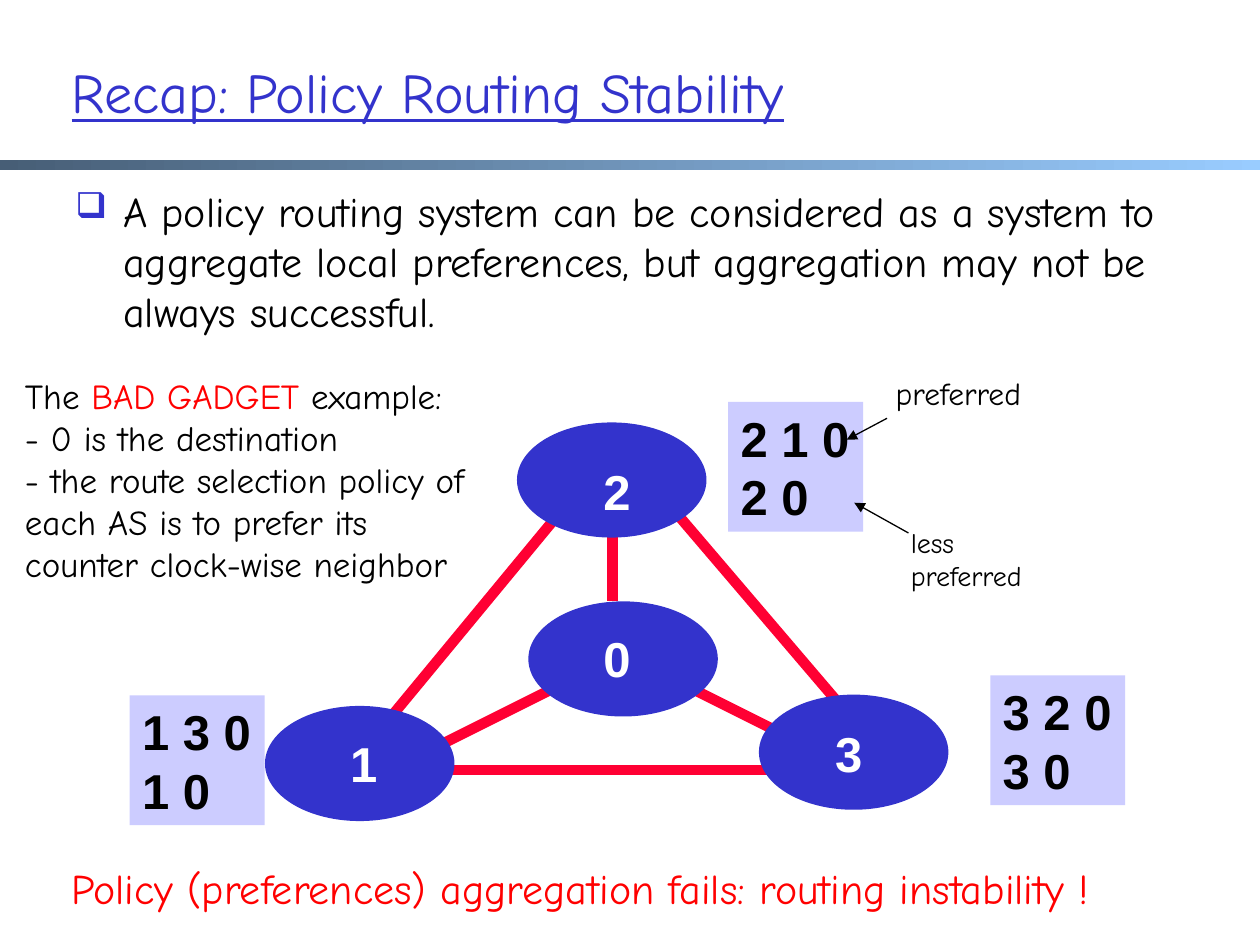
from dataclasses import dataclass
from typing import NamedTuple

from lxml.etree import SubElement
from pptx import Presentation
from pptx.dml.color import RGBColor
from pptx.enum.shapes import MSO_CONNECTOR as Connector, MSO_SHAPE as Preset
from pptx.enum.text import MSO_ANCHOR as Anchor
from pptx.oxml.ns import qn
from pptx.util import Pt

EMU_PER_PX = 9144


@dataclass(frozen=True)
class Theme:
    hand: str = "Comic Neue"
    sans: str = "Arial"
    blue: str = "3333CC"
    pale: str = "CCCCFF"
    link: str = "FF0033"
    red: str = "FF0000"
    black: str = "000000"
    white: str = "FFFFFF"
    bar_start: str = "475E76"
    bar_end: str = "99CCFF"
    title: int = 32
    number: int = 28
    body: int = 24
    note: int = 20
    label: int = 18
    small: int = 16
    link_width: float = 6
    arrow_width: float = 0.75


THEME = Theme()


class Box(NamedTuple):
    left: int
    top: int
    width: int
    height: int


class Line(NamedTuple):
    start_x: int
    start_y: int
    end_x: int
    end_y: int


class Style(NamedTuple):
    size: int
    color: str = THEME.black
    font: str = THEME.hand
    bold: bool = False


@dataclass(frozen=True)
class Node:
    name: str
    left: int
    top: int
    text_left: int
    text_top: int


@dataclass(frozen=True)
class Routes:
    lines: str
    left: int
    top: int


@dataclass(frozen=True)
class Note:
    text: str
    box: Box
    style: Style
    wrap: bool = True


LINKS = [
    Line(703, 602, 511, 377),
    Line(469, 377, 269, 619),
    Line(486, 352, 486, 477),
    Line(478, 527, 344, 594),
    Line(644, 594, 544, 544),
    Line(719, 611, 269, 611),
]
NODES = [
    Node("2", 411, 336, 469, 361),
    Node("0", 420, 478, 469, 494),
    Node("3", 603, 552, 653, 569),
    Node("1", 211, 561, 268, 577),
]
ROUTES = [
    Routes("2 1 0\n2 0", 578, 319),
    Routes("1 3 0\n1 0", 103, 552),
    Routes("3 2 0\n3 0", 786, 536),
]
ARROWS = [Line(704, 332, 672, 349), Line(721, 423, 678, 399)]
NOTES = [
    Note("preferred", Box(701, 292, 138, 40), Style(THEME.label), False),
    Note("less\npreferred", Box(713, 412, 125, 64), Style(THEME.small), False),
    Note("Policy (preferences) aggregation fails: routing instability !",
         Box(47, 680, 927, 50), Style(THEME.body, THEME.red)),
]
EXAMPLE = Note(
    "The BAD GADGET example:\n- 0 is the destination\n"
    "- the route selection policy of each AS is to prefer its counter clock-wise neighbor",
    Box(10, 292, 386, 177), Style(THEME.note))
TITLE = Note("Recap: Policy Routing Stability", Box(47, 28, 902, 89),
             Style(THEME.title, THEME.blue))
BODY = Note(
    "A policy routing system can be considered as a system to aggregate local "
    "preferences, but aggregation may not be always successful.",
    Box(50, 142, 881, 531), Style(THEME.body))
NUMBER = Style(THEME.number, THEME.black, THEME.sans, True)
NODE_NUMBER = NUMBER._replace(color=THEME.white)


def px(value: int) -> int:
    return value * EMU_PER_PX


def rgb(value: str) -> RGBColor:
    return RGBColor.from_string(value)


def format_run(run, style: Style) -> None:
    font = run.font
    font.name, font.size, font.bold = style.font, Pt(style.size), style.bold
    font.color.rgb = rgb(style.color)


def write(shape, text: str, style: Style, wrap: bool):
    frame = shape.text_frame
    frame.text = text
    frame.word_wrap = wrap
    frame.vertical_anchor = Anchor.TOP
    for paragraph in frame.paragraphs:
        paragraph.alignment = 1
        for run in paragraph.runs:
            format_run(run, style)
    return frame


def add_text(slide, note: Note):
    shape = slide.shapes.add_textbox(*map(px, note.box))
    return write(shape, note.text, note.style, note.wrap)


def add_filled(slide, preset: Preset, box: Box, color: str):
    shape = slide.shapes.add_shape(preset, *map(px, box))
    shape.shadow.inherit = False
    shape.fill.solid()
    shape.fill.fore_color.rgb = rgb(color)
    shape.line.fill.background()
    return shape


def add_line(slide, line: Line, color: str, width: float, arrow: bool = False) -> None:
    connector = slide.shapes.add_connector(Connector.STRAIGHT, *map(px, line))
    connector.line.color.rgb = rgb(color)
    connector.line.width = Pt(width)
    if arrow:
        SubElement(connector.line._get_or_add_ln(), qn("a:tailEnd"), type="triangle")
    SubElement(connector._element.spPr, qn("a:effectLst"))


def add_node(slide, node: Node) -> None:
    shape = add_filled(slide, Preset.OVAL, Box(node.left, node.top, 149, 90), THEME.blue)
    shape.line.color.rgb = rgb(THEME.blue)
    shape.line.width = Pt(1)
    add_text(slide, Note(node.name, Box(node.text_left, node.text_top, 42, 57),
                         NODE_NUMBER, False))


def add_routes(slide, routes: Routes) -> None:
    box = Box(routes.left, routes.top, 107, 103)
    write(add_filled(slide, Preset.RECTANGLE, box, THEME.pale), routes.lines, NUMBER, False)


def add_title(slide) -> None:
    bar = add_filled(slide, Preset.RECTANGLE, Box(0, 127, 1000, 8), THEME.bar_start)
    bar.fill.gradient()
    bar.fill.gradient_angle = 0
    for stop, color in zip(bar.fill.gradient_stops, (THEME.bar_start, THEME.bar_end)):
        stop.color.rgb = rgb(color)
    frame = add_text(slide, TITLE)
    frame.vertical_anchor = Anchor.MIDDLE
    frame.paragraphs[0].runs[0].font.underline = True


def add_example(slide) -> None:
    paragraph = add_text(slide, EXAMPLE).paragraphs[0]
    before, marked, after = paragraph.text.partition("BAD GADGET")
    paragraph.text = before
    for text in (marked, after):
        paragraph.add_run().text = text
    for run in paragraph.runs:
        format_run(run, EXAMPLE.style)
    paragraph.runs[1].font.color.rgb = rgb(THEME.red)


def add_body(slide) -> None:
    paragraph = add_text(slide, BODY).paragraphs[0]
    paragraph.space_before = Pt(5)
    properties = paragraph._p.get_or_add_pPr()
    properties.set("marL", str(px(38)))
    properties.set("indent", str(px(-38)))
    SubElement(SubElement(properties, qn("a:buClr")), qn("a:srgbClr"), val=THEME.blue)
    SubElement(properties, qn("a:buSzPct"), val="85000")
    SubElement(properties, qn("a:buChar"), char="❑")


def main() -> None:
    presentation = Presentation()
    presentation.slide_width, presentation.slide_height = px(1000), px(750)
    slide = presentation.slides.add_slide(presentation.slide_layouts[6])
    add_title(slide)
    for link in LINKS:
        add_line(slide, link, THEME.link, THEME.link_width)
    for node in NODES:
        add_node(slide, node)
    for routes in ROUTES:
        add_routes(slide, routes)
    for arrow in ARROWS:
        add_line(slide, arrow, THEME.black, THEME.arrow_width, arrow=True)
    for note in NOTES:
        add_text(slide, note)
    add_example(slide)
    add_body(slide)
    presentation.save("out.pptx")


if __name__ == "__main__":
    main()
